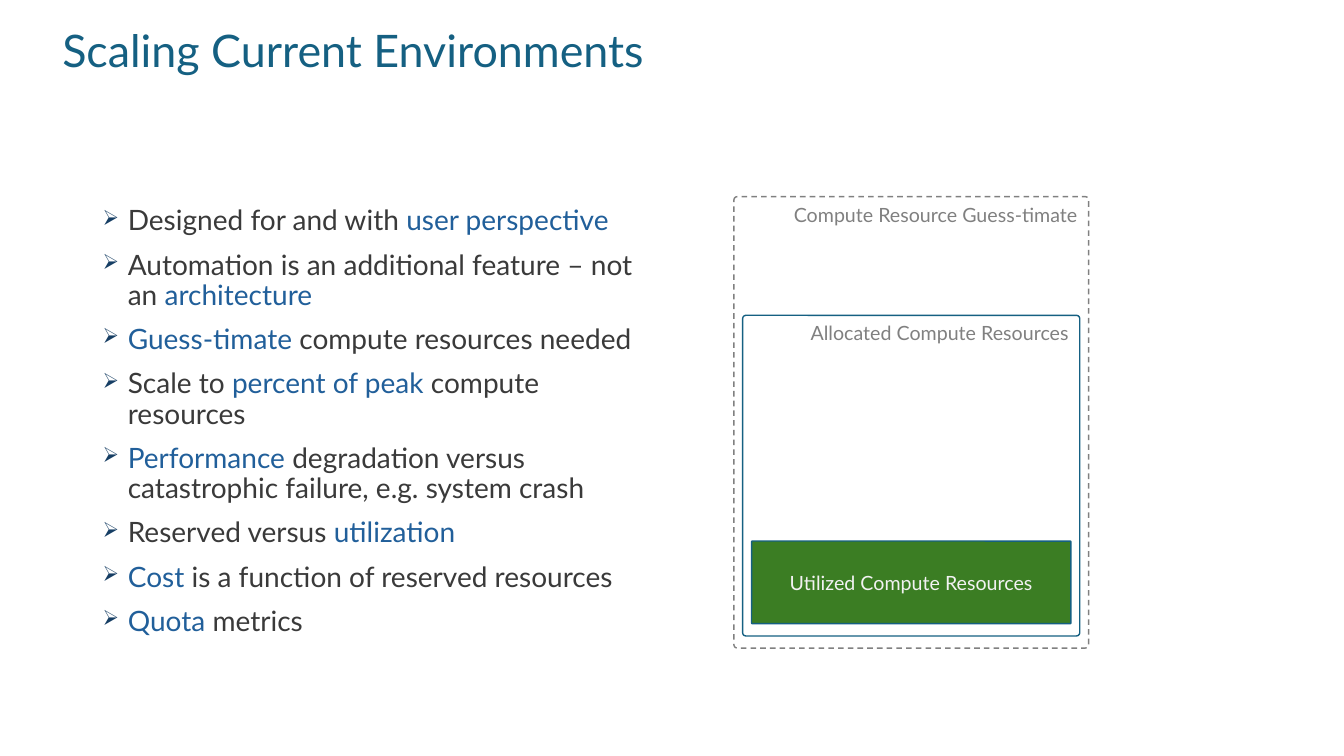
from lxml.etree import SubElement
from pptx import Presentation
from pptx.dml.color import RGBColor
from pptx.enum.dml import MSO_LINE
from pptx.enum.shapes import MSO_SHAPE
from pptx.enum.text import MSO_ANCHOR, PP_ALIGN
from pptx.oxml.ns import qn
from pptx.util import Inches, Pt

SLIDE_W, SLIDE_H = Inches(13.33), Inches(7.5)
FONT = "Lato"
TEAL = RGBColor(0x15, 0x60, 0x82)
INK = RGBColor(0x3A, 0x3A, 0x3A)
BLUE = RGBColor(0x21, 0x5F, 0x9A)
GRAY = RGBColor(0x80, 0x80, 0x80)
GREEN = RGBColor(0x3B, 0x7D, 0x23)
PALE = RGBColor(0xF2, 0xF2, 0xF2)
BULLET_COLOR = "163E64"

# Text between bars is emphasized.
POINTS = [
    "Designed for and with |user perspective|",
    "Automation is an additional feature – not an |architecture|",
    "|Guess-timate| compute resources needed",
    "Scale to |percent of peak| compute resources",
    "|Performance| degradation versus catastrophic failure, e.g. system crash",
    "Reserved versus |utilization|",
    "|Cost| is a function of reserved resources",
    "|Quota| metrics",
]


def region(left, top, width, height):
    """Turn percentages of the slide into a box of lengths."""
    return (int(SLIDE_W * left / 100), int(SLIDE_H * top / 100),
            int(SLIDE_W * width / 100), int(SLIDE_H * height / 100))


def add_run(p, text, size, color):
    """Append one styled run to a paragraph."""
    r = p.add_run()
    r.text = text
    r.font.name, r.font.size = FONT, Pt(size)
    r.font.color.rgb = color


def add_text_frame(s, box):
    """Add a wrapping text box and return its text frame."""
    tf = s.shapes.add_textbox(*box).text_frame
    tf.word_wrap = True
    return tf


def add_title(s, box, text):
    """Place the slide title in the box."""
    p = add_text_frame(s, box).paragraphs[0]
    p.line_spacing = 0.9
    add_run(p, text, 32, TEAL)


def set_bullet(p):
    """Give a paragraph a hanging arrow bullet."""
    pPr = p._p.get_or_add_pPr()
    pPr.set("marL", str(Inches(0.25)))
    pPr.set("indent", str(-Inches(0.25)))
    color = SubElement(pPr, qn("a:buClr"))
    SubElement(color, qn("a:srgbClr"), val=BULLET_COLOR)
    SubElement(pPr, qn("a:buSzPct"), val="75000")
    SubElement(pPr, qn("a:buChar"), char="➢")


def add_points(s, box, points):
    """Fill the box with bulleted points."""
    tf = add_text_frame(s, box)
    for i, point in enumerate(points):
        p = tf.add_paragraph() if i else tf.paragraphs[0]
        set_bullet(p)
        p.line_spacing = 0.9
        p.space_before = Pt(10 if i else 0)
        for j, text in enumerate(point.split("|")):
            if text:
                add_run(p, text, 20, BLUE if j % 2 else INK)


def add_level(s, box, label, line, color, fill=None, dash=None):
    """Draw one labelled level of the resource diagram."""
    sp = s.shapes.add_shape(MSO_SHAPE.ROUNDED_RECTANGLE, *box)
    sp.adjustments[0] = 0.01
    sp.shadow.inherit = False
    sp.line.color.rgb, sp.line.width = line, Pt(1)
    if dash:
        sp.line.dash_style = dash
    if fill:
        sp.fill.solid()
        sp.fill.fore_color.rgb = fill
    else:
        sp.fill.background()
    tf = sp.text_frame
    tf.word_wrap = True
    tf.vertical_anchor = MSO_ANCHOR.MIDDLE if fill else MSO_ANCHOR.TOP
    p = tf.paragraphs[0]
    p.alignment = PP_ALIGN.CENTER if fill else PP_ALIGN.RIGHT
    add_run(p, label, 14, color)


def add_resources(s, box):
    """Nest the resource levels inside the box, each resting near the last one's base."""
    left, top, width, height = box
    side, base = int(width * 0.025), int(height * 0.027)
    levels = [
        (1, "Compute Resource Guess-timate", GRAY, GRAY, None, MSO_LINE.DASH),
        (0.71, "Allocated Compute Resources", TEAL, GRAY, None, None),
        (0.183, "Utilized Compute Resources", TEAL, PALE, GREEN, None),
    ]
    for depth, (share, *style) in enumerate(levels):
        h = int(height * share)
        level_box = (left + depth * side, top + height - depth * base - h,
                     width - 2 * depth * side, h)
        add_level(s, level_box, *style)


def main():
    """Build and save the slide."""
    prs = Presentation()
    prs.slide_width, prs.slide_height = SLIDE_W, SLIDE_H
    s = prs.slides.add_slide(prs.slide_layouts[6])
    add_title(s, region(3.9, 3.2, 71.8, 14.67), "Scaling Current Environments")
    add_points(s, region(6.9, 26.67, 42.53, 63.47), POINTS)
    add_resources(s, region(54.6, 26, 26.4, 59.73))
    prs.save("out.pptx")


if __name__ == "__main__":
    main()
